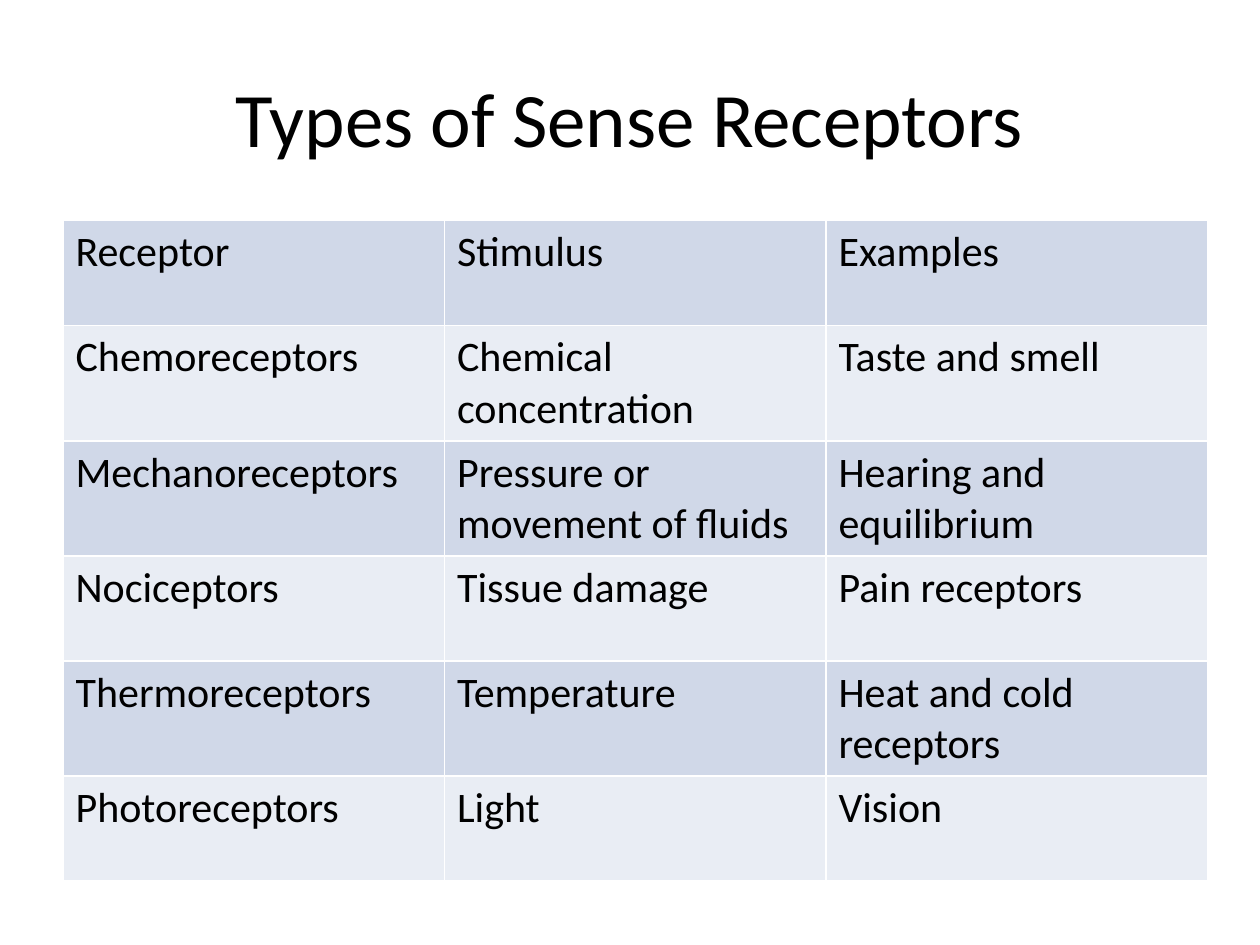
import pptx
import pptx.dml.color
import pptx.enum.text
import pptx.oxml
import pptx.oxml.ns
import pptx.util
from pptx.util import Cm

FONT = "Calibri"
BAND_COLORS = ["D0D8E8", "E9EDF4"]
ROWS = [
    ["Receptor", "Stimulus", "Examples"],
    ["Chemoreceptors", "Chemical concentration", "Taste and smell"],
    ["Mechanoreceptors", "Pressure or movement of fluids", "Hearing and equilibrium"],
    ["Nociceptors", "Tissue damage", "Pain receptors"],
    ["Thermoreceptors", "Temperature", "Heat and cold receptors"],
    ["Photoreceptors", "Light", "Vision"],
]


def set_color(color_format, value):
    color_format.rgb = pptx.dml.color.RGBColor.from_string(value)


def add_borders(cell, value, points):
    properties = cell._tc.get_or_add_tcPr()
    for side in ["lnL", "lnR", "lnT", "lnB"]:
        properties.append(pptx.oxml.parse_xml(
            f'<a:{side} {pptx.oxml.ns.nsdecls("a")} w="{pptx.util.Pt(points)}">'
            f'<a:solidFill><a:srgbClr val="{value}"/></a:solidFill></a:{side}>'))


presentation = pptx.Presentation()
presentation.slide_width = Cm(25.4)
presentation.slide_height = Cm(19.05)
slide = presentation.slides.add_slide(presentation.slide_layouts[5])

# Title
title = slide.shapes.title
title.left, title.top, title.width, title.height = Cm(1.27), Cm(0.76), Cm(22.86), Cm(3.18)
title.text_frame.text = "Types of Sense Receptors"
title.text_frame.vertical_anchor = pptx.enum.text.MSO_ANCHOR.MIDDLE
paragraph = title.text_frame.paragraphs[0]
paragraph.alignment = pptx.enum.text.PP_ALIGN.CENTER
paragraph.font.name = FONT
paragraph.font.size = pptx.util.Pt(44)
set_color(paragraph.font.color, "000000")

# Receptor table; rows with two lines of text grow when drawn
table = slide.shapes.add_table(
    len(ROWS), len(ROWS[0]), Cm(1.27), Cm(4.45), Cm(23.07), Cm(12.7)).table
table.first_row = False
for row_index, row in enumerate(ROWS):
    for column_index, text in enumerate(row):
        cell = table.cell(row_index, column_index)
        add_borders(cell, "FFFFFF", 1)
        cell.fill.solid()
        set_color(cell.fill.fore_color, BAND_COLORS[row_index % 2])
        cell.text = text
        paragraph = cell.text_frame.paragraphs[0]
        paragraph.font.name = FONT
        paragraph.font.size = pptx.util.Pt(24)
        set_color(paragraph.font.color, "000000")

presentation.save("out.pptx")
